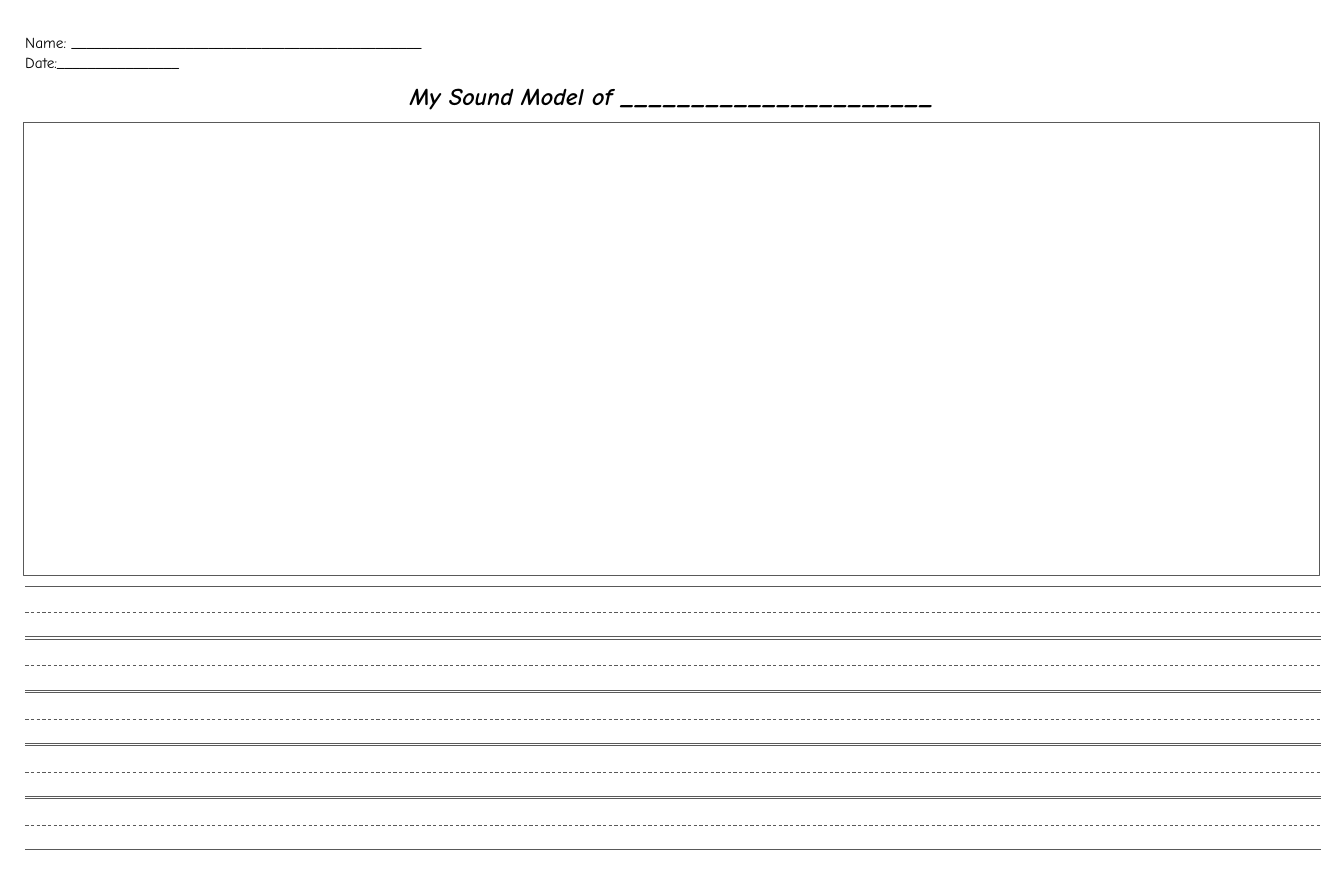
from pptx import Presentation
from pptx.dml.color import RGBColor
from pptx.enum import dml, shapes, text
from pptx.oxml.ns import qn
from pptx.util import Inches, Pt

INK = {"text": "000000", "line": "595959"}
FONT = "Comic Neue"
ROWS = 5
GAP = 0.03


def stroke(line):
    """Give an outline the sheet's thin grey stroke."""
    line.color.rgb = RGBColor.from_string(INK["line"])
    line.width = Pt(0.75)


def write(slide, box, lines, size, top=0.1, bold=False):
    """Place a text box with one paragraph per line and return its paragraphs."""
    frame = slide.shapes.add_textbox(*map(Inches, box)).text_frame
    frame.word_wrap = True
    frame.vertical_anchor = text.MSO_ANCHOR.TOP
    frame.margin_left = frame.margin_right = frame.margin_bottom = Inches(0.1)
    frame.margin_top = Inches(top)
    frame.text = "\n".join(lines)
    for para in frame.paragraphs:
        for run in para.runs:
            font = run.font
            font.name, font.size = FONT, Pt(size)
            font.bold = font.italic = bold
            font.color.rgb = RGBColor.from_string(INK["text"])
    return frame.paragraphs


def header(slide, box):
    """Write the name and date blanks."""
    lines = ["Name: " + "_" * 46, "Date:" + "_" * 16]
    paras = write(slide, box, lines, 14, top=0.16)
    paras[0].space_after = Pt(1)


def title(slide, box):
    """Write the centred heading with its blank."""
    para = write(slide, box, ["My Sound Model of " + "_" * 22], 22, bold=True)[0]
    para.alignment = text.PP_ALIGN.CENTER
    para.line_spacing = 1.15


def frame(slide, box):
    """Draw the empty drawing area."""
    area = slide.shapes.add_shape(shapes.MSO_SHAPE.RECTANGLE, *map(Inches, box))
    area.shadow.inherit = False
    area.fill.background()
    stroke(area.line)


def rule(slide, left, right, y, dash=False):
    """Draw one level writing line."""
    line = slide.shapes.add_connector(
        shapes.MSO_CONNECTOR.STRAIGHT, *map(Inches, (left, y, right, y)))
    props = line._element.spPr
    stroke(line.line)
    if dash:
        line.line.dash_style = dml.MSO_LINE.DASH
    props.append(props.makeelement(qn("a:effectLst"), {}))


def writing(slide, box):
    """Fill the box with equal rows of top, dashed middle and base lines."""
    left, top, width, height = box
    pitch = (height + GAP) / ROWS
    for row in range(ROWS):
        y = top + row * pitch
        rule(slide, left, left + width, y)
        rule(slide, left, left + width, y + pitch / 2, dash=True)
        rule(slide, left, left + width, y + pitch - GAP)


def main():
    """Build the sound model worksheet."""
    deck = Presentation()
    deck.slide_width, deck.slide_height = Inches(17), Inches(11)
    slide = deck.slides.add_slide(deck.slide_layouts[6])
    frame(slide, (0.29, 1.55, 16.4, 5.72))
    header(slide, (0.22, 0.26, 16.55, 0.68))
    title(slide, (3.55, 0.87, 9.9, 0.68))
    writing(slide, (0.32, 7.41, 16.39, 3.33))
    deck.save("out.pptx")


if __name__ == "__main__":
    main()
